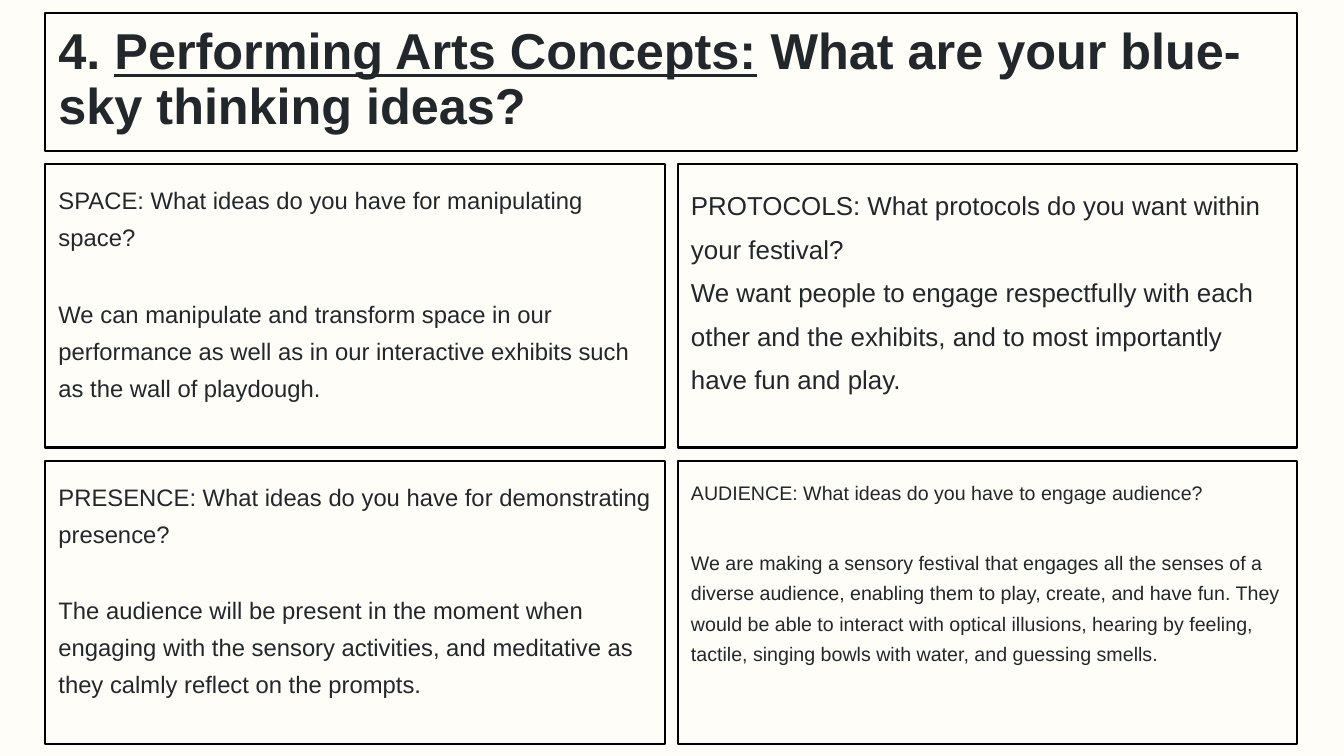
from pptx import Presentation
from pptx.dml.color import RGBColor
from pptx.enum.shapes import MSO_SHAPE
from pptx.enum.text import MSO_ANCHOR, MSO_AUTO_SIZE, PP_ALIGN
from pptx.util import Pt

COLORS = {"paper": "FFFDF8", "ink": "22272B", "border": "000000"}
LEFT, WIDTH, GAP = 32.4, 894.24, 9.36
CARD_TOP, CARD_HEIGHT = 117.36, 202.32
CARD_WIDTH = (WIDTH - GAP) / 2
INSET = 9.36


def frame_box(box, anchor):
    """Outline the box, clear its fill and set its margins."""
    box.fill.background()
    box.line.color.rgb = RGBColor.from_string(COLORS["border"])
    box.line.width = Pt(1.5)
    frame = box.text_frame
    frame.word_wrap = True
    frame.auto_size = MSO_AUTO_SIZE.NONE
    frame.vertical_anchor = anchor
    frame.margin_left = frame.margin_right = Pt(INSET)
    frame.margin_top = frame.margin_bottom = Pt(INSET)
    return frame


def style_paragraph(paragraph, size, spacing, bold=False):
    paragraph.alignment = PP_ALIGN.LEFT
    paragraph.line_spacing = spacing
    for run in paragraph.runs:
        run.font.name = "Arial"
        run.font.size = Pt(size)
        run.font.bold = bold
        run.font.color.rgb = RGBColor.from_string(COLORS["ink"])


prs = Presentation()
prs.slide_width, prs.slide_height = Pt(960), Pt(540)
slide = prs.slides.add_slide(prs.slide_layouts[5])
slide.background.fill.solid()
slide.background.fill.fore_color.rgb = RGBColor.from_string(COLORS["paper"])

title = slide.shapes.title
title.left, title.top, title.width, title.height = Pt(LEFT), Pt(9.36), Pt(WIDTH), Pt(98.64)
heading = frame_box(title, MSO_ANCHOR.TOP).paragraphs[0]
for words in ("4. ", "Performing Arts Concepts:", " What are your blue-sky thinking ideas?"):
    heading.add_run().text = words
style_paragraph(heading, 36, 0.9, bold=True)
heading.runs[1].font.underline = True

# column, row, text size, line spacing, space after the question, paragraphs
concepts = [
    (0, 0, 17, 1.3, 12, [
        "SPACE: What ideas do you have for manipulating space?",
        "We can manipulate and transform space in our performance as well as in our "
        "interactive exhibits such as the wall of playdough."]),
    (0, 1, 17, 1.3, 12, [
        "PRESENCE: What ideas do you have for demonstrating presence?",
        "The audience will be present in the moment when engaging with the sensory "
        "activities, and meditative as they calmly reflect on the prompts."]),
    (1, 0, 18.5, 1.4, 16, [
        "PROTOCOLS: What protocols do you want within your festival?\v"
        "We want people to engage respectfully with each other and the exhibits, "
        "and to most importantly have fun and play."]),
    (1, 1, 14, 1.3, 12, [
        "AUDIENCE: What ideas do you have to engage audience?",
        "We are making a sensory festival that engages all the senses of a diverse "
        "audience, enabling them to play, create, and have fun. They would be able to "
        "interact with optical illusions, hearing by feeling, tactile, singing bowls "
        "with water, and guessing smells."]),
]

for column, row, size, spacing, question_gap, paragraphs in concepts:
    card = slide.shapes.add_shape(
        MSO_SHAPE.RECTANGLE,
        Pt(LEFT + column * (CARD_WIDTH + GAP)), Pt(CARD_TOP + row * (CARD_HEIGHT + GAP)),
        Pt(CARD_WIDTH), Pt(CARD_HEIGHT))
    card.shadow.inherit = False
    frame = frame_box(card, MSO_ANCHOR.TOP)
    frame.text = "\n".join(paragraphs)
    for paragraph in frame.paragraphs:
        style_paragraph(paragraph, size, spacing)
    question, *answers = frame.paragraphs
    question.space_after = Pt(question_gap)
    for answer in answers:
        answer.space_before = answer.space_after = Pt(16)

prs.save("out.pptx")
